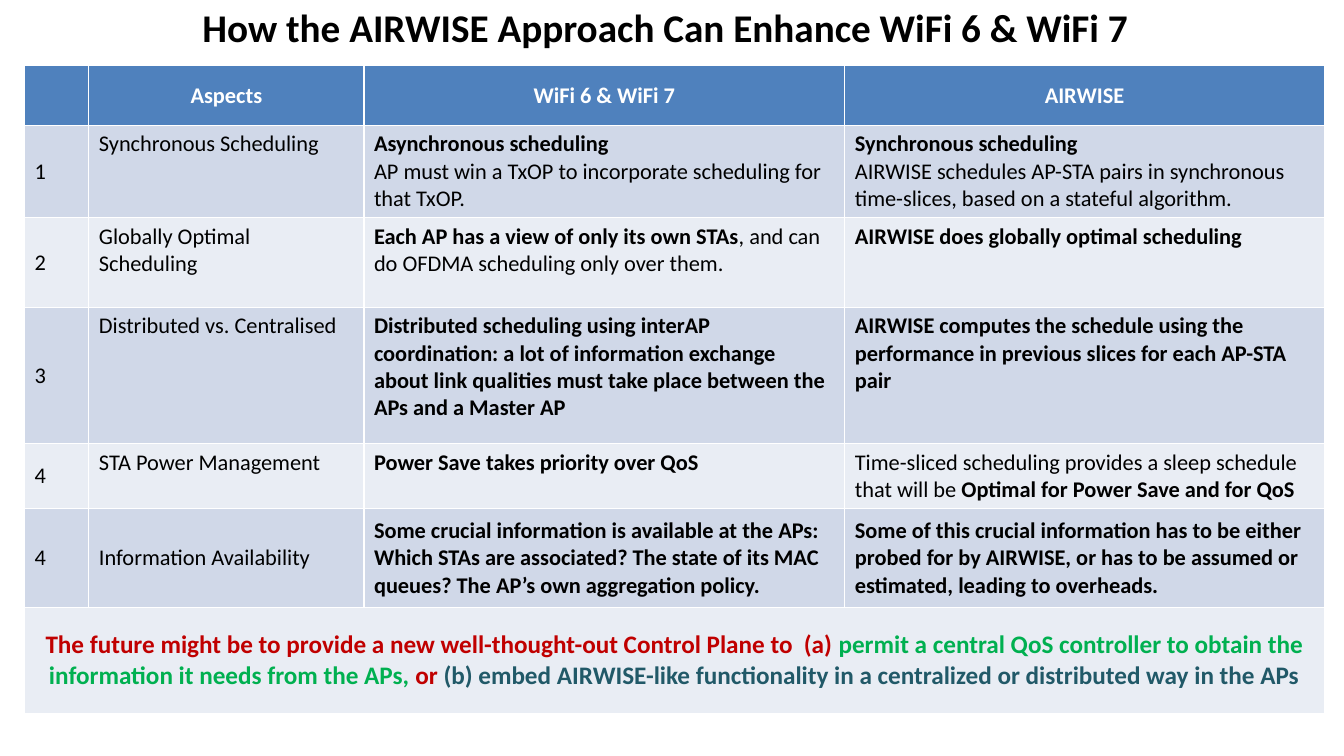
"""Builds the slide that compares AIRWISE with WiFi 6 and WiFi 7."""
from dataclasses import dataclass

from pptx import Presentation
from pptx import util as u
from pptx.dml.color import RGBColor
from pptx.enum import text


@dataclass(frozen=True)
class Theme:
    font: str = "Calibri"
    title_size: int = 28
    body_size: int = 16
    closing_size: int = 18
    black: str = "000000"
    white: str = "FFFFFF"
    header: str = "4F81BD"
    bands: tuple = ("D0D8E8", "E9EDF4")
    red: str = "C00000"
    green: str = "00B050"
    teal: str = "215968"


@dataclass(frozen=True)
class Run:
    text: str
    bold: bool = False
    color: str = Theme.black


class Deck:
    def __init__(self, prs, theme):
        self.prs, self.theme = prs, theme
        self.s = prs.slides.add_slide(prs.slide_layouts[5])

    def font(self, font, size, bold, color):
        font.name, font.size = self.theme.font, u.Pt(size)
        font.bold = bold
        font.color.rgb = RGBColor.from_string(color)

    def paragraph(self, p, runs, size, align):
        p.alignment = align
        first = runs[0]
        self.font(p.font, size, first.bold, first.color)
        uniform = all((run.bold, run.color) == (first.bold, first.color) for run in runs)
        for run in runs:
            r = p.add_run()
            r.text = run.text
            if not uniform:
                self.font(r.font, size, run.bold, run.color)

    def title(self, words, left, top, width, height):
        sp = self.s.shapes.title
        sp.left, sp.top, sp.width, sp.height = map(u.Pt, (left, top, width, height))
        tf = sp.text_frame
        tf.vertical_anchor = text.MSO_ANCHOR.MIDDLE
        tf.auto_size = text.MSO_AUTO_SIZE.NONE
        self.paragraph(tf.paragraphs[0], [Run(words, True, self.theme.black)],
                       self.theme.title_size, text.PP_ALIGN.CENTER)

    def table(self, left, top, widths, heights):
        box = map(u.Pt, (left, top, sum(widths), sum(heights)))
        tbl = self.s.shapes.add_table(len(heights), len(widths), *box).table
        for col, width in zip(tbl.columns, widths):
            col.width = u.Pt(width)
        for row, height in zip(tbl.rows, heights):
            row.height = u.Pt(height)
        return tbl

    def cell(self, cell, paragraphs, fill, size, centred=False, middle=False):
        cell.fill.solid()
        cell.fill.fore_color.rgb = RGBColor.from_string(fill)
        cell.vertical_anchor = text.MSO_ANCHOR.MIDDLE if middle else text.MSO_ANCHOR.TOP
        align = text.PP_ALIGN.CENTER if centred else text.PP_ALIGN.LEFT
        tf = cell.text_frame
        for i, runs in enumerate(paragraphs):
            p = tf.add_paragraph() if i else tf.paragraphs[0]
            self.paragraph(p, runs, size, align)


def plain(words):
    return [[Run(words)]]


def bold(words):
    return [[Run(words, True)]]


HEADINGS = ["", "Aspects", "WiFi 6 & WiFi 7", "AIRWISE"]
ASPECTS = [
    ("1", "Synchronous Scheduling",
     bold("Asynchronous scheduling")
     + plain("AP must win a TxOP to incorporate scheduling for that TxOP."),
     bold("Synchronous scheduling")
     + plain("AIRWISE schedules AP-STA pairs in synchronous time-slices, "
             "based on a stateful algorithm.")),
    ("2", "Globally Optimal Scheduling",
     [[Run("Each AP has a view of only its own STAs", True),
       Run(", and can do OFDMA scheduling only over them.")]],
     bold("AIRWISE does globally optimal scheduling")),
    ("3", "Distributed vs. Centralised",
     bold("Distributed scheduling using interAP coordination: a lot of information "
          "exchange about link qualities must take place between the APs and a Master AP"),
     bold("AIRWISE computes the schedule using the performance in previous slices "
          "for each AP-STA pair")),
    ("4", "STA Power Management",
     bold("Power Save takes priority over QoS"),
     [[Run("Time-sliced scheduling provides a sleep schedule that will be "),
       Run("Optimal for Power Save and for QoS", True)]]),
    ("4", "Information Availability",
     bold("Some crucial information is available at the APs: Which STAs are associated? "
          "The state of its MAC queues? The AP’s own aggregation policy."),
     bold("Some of this crucial information has to be either probed for by AIRWISE, "
          "or has to be assumed or estimated, leading to overheads.")),
]
CLOSING = [
    Run("The future might be to provide a new well-thought-out Control Plane to  (a) ",
        True, Theme.red),
    Run("permit a central QoS controller to obtain the information it needs from the APs,",
        True, Theme.green),
    Run(" or ", True, Theme.red),
    Run("(b) embed AIRWISE-like functionality in a centralized or distributed way in the APs",
        True, Theme.teal),
]


def main():
    theme = Theme()
    prs = Presentation()
    prs.slide_width, prs.slide_height = u.Pt(960), u.Pt(540)
    deck = Deck(prs, theme)
    deck.title("How the AIRWISE Approach Can Enhance WiFi 6 & WiFi 7", 43, -5, 864, 48)

    tbl = deck.table(17.5, 47, (46, 196.5, 343.5, 342.5),
                     (42.5, 66, 64, 97.5, 45.5, 70.5, 76))
    for col, heading in enumerate(HEADINGS):
        runs = [Run(heading, True, theme.white)]
        deck.cell(tbl.cell(0, col), [runs] if heading else [], theme.header,
                  theme.body_size, centred=True, middle=True)

    for row, (number, aspect, wifi, airwise) in enumerate(ASPECTS, 1):
        contents = (plain(number), plain(aspect), wifi, airwise)
        for col, paragraphs in enumerate(contents):
            deck.cell(tbl.cell(row, col), paragraphs, theme.bands[(row - 1) % 2],
                      theme.body_size, middle=col == 0 or row == len(ASPECTS))

    last = len(ASPECTS) + 1
    closing = tbl.cell(last, 0)
    closing.merge(tbl.cell(last, len(HEADINGS) - 1))
    deck.cell(closing, [CLOSING], theme.bands[1], theme.closing_size,
              centred=True, middle=True)
    prs.save("out.pptx")


if __name__ == "__main__":
    main()
